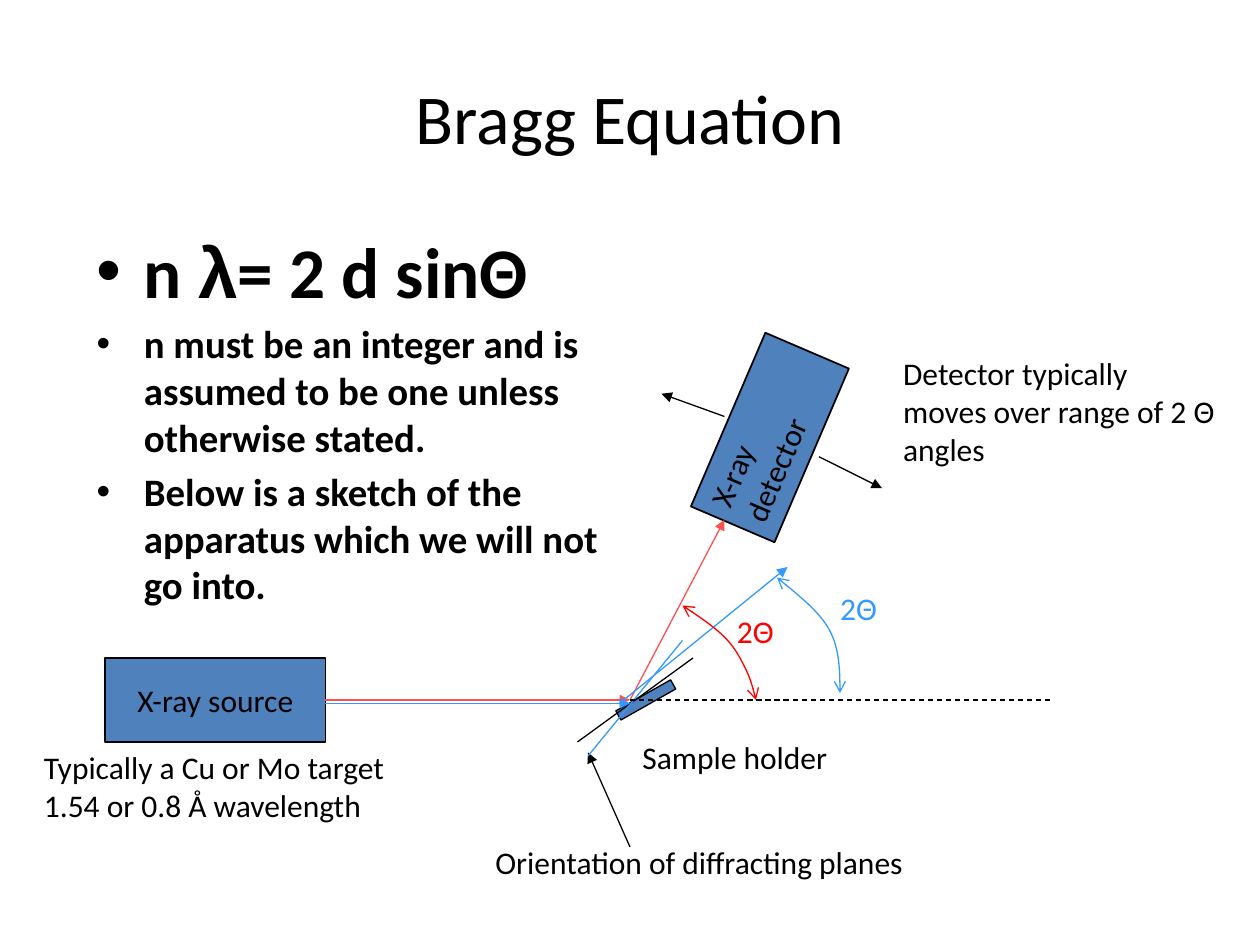
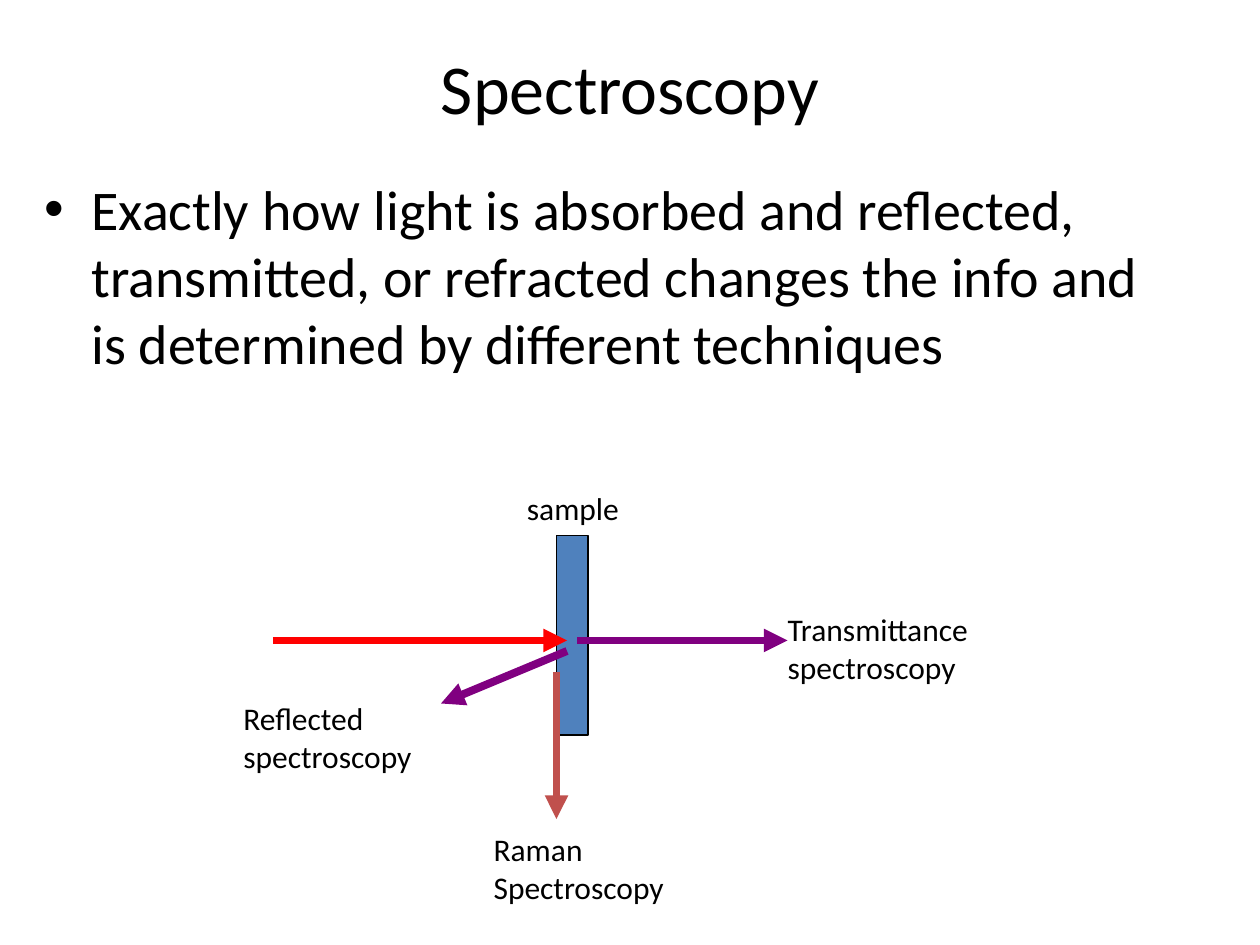
from dataclasses import dataclass

from lxml import etree
from pptx import Presentation
from pptx import util as u
from pptx.dml.color import RGBColor
from pptx.enum import dml, shapes, text
from pptx.oxml import ns


@dataclass(frozen=True)
class Theme:
    font: str = "Calibri"
    symbol_font: str = "Arial"
    black: str = "000000"
    blue: str = "4F81BD"
    red: str = "FF0000"
    coral: str = "FF5050"
    sky: str = "3399FF"
    purple: str = "800080"
    brick: str = "C0504D"
    title: float = 40
    equation: float = 40.7
    notes: float = 22.2
    body: float = 32
    label: float = 18
    thin: float = 0.75
    thick: float = 4.5


THEME = Theme()

SOURCE, DETECTOR = "X-ray source", "X-ray detector"
HIT = (360, 400)

BRAGG = {
    "title": ("Bragg Equation", (36, 21.6, 648, 90)),
    "body_at": (48, 126, 324, 222),
    "body": [
        ([("n ", THEME.font), ("λ", THEME.symbol_font), ("= 2 d sinΘ", THEME.font)], THEME.equation, True),
        ([("n must be an integer and is assumed to be one unless otherwise stated.", THEME.font)], THEME.notes, True),
        ([("Below is a sketch of the apparatus which we will not go into.", THEME.font)], THEME.notes, True),
    ],
    "boxes": [
        (SOURCE, (60, 376, 126, 48), 0, 0.75),
        ("", (366, 382, 6, 36), 60.5, 0.75),
        (DETECTOR, (386, 224, 108, 52), 293.2, 1),
    ],
    "lines": [
        ((186, 400), HIT, THEME.coral, True),
        (HIT, (414, 297), THEME.coral, True),
        ((396, 376), (330, 424), THEME.black, False),
        ((360, 484), (336, 430), THEME.black, True),
        ((468, 261), (504, 279), THEME.black, True),
        ((414, 238), (378, 225), THEME.black, True),
        ((390, 366), (336, 432), THEME.sky, False),
        ((186, 402), (360, 402), THEME.sky, True),
        ((354, 402), (450, 324), THEME.sky, True),
    ],
    "labels": [
        ("Sample holder", (360, 418, 130, 29), THEME.black, False),
        ("Orientation of diffracting planes", (276, 478, 250, 29), THEME.black, False),
        ("Detector typically moves over range of 2 Θ angles", (509, 199, 193, 72), THEME.black, True),
        ("2Θ", (414, 346, 38, 29), THEME.red, False),
        ("2Θ", (473, 333, 38, 29), THEME.sky, False),
        ("Typically a Cu or Mo target\n1.54 or 0.8 Å wavelength", (18, 424, 230, 50), THEME.black, False),
    ],
}
BASELINE = (HIT, (600, 400))
ANGLE_ARCS = [
    (THEME.red, [(390, 346), (399, 352), (408, 358), (414, 364), (420, 370), (423, 376), (426, 382),
                 (429, 388), (430.5, 394), (432, 400)]),
    (THEME.sky, [(480, 396), (480, 384), (480, 371), (474, 360), (468, 349), (456, 340), (444, 330)]),
]

SPECTROSCOPY = {
    "title": ("Spectroscopy", (36, 21.6, 648, 56)),
    "body_at": (18, 96, 648, 174),
    "body": [([("Exactly how light is absorbed and reflected, transmitted, or refracted changes the info "
                "and is determined by different techniques", THEME.font)], THEME.body, False)],
    "boxes": [("", (318, 306, 18, 114), 0, 0.75)],
    "lines": [
        ((156, 366), (324, 366), THEME.red, True),
        ((330, 366), (450, 366), THEME.purple, True),
        ((324, 372), (252, 402), THEME.purple, True),
        ((318, 384), (318, 468), THEME.brick, True),
    ],
    "labels": [
        ("sample", (294, 276, 73, 29), THEME.black, False),
        ("Reflected\nspectroscopy", (132, 396, 120, 50), THEME.black, False),
        ("Transmittance\nspectroscopy", (443, 345, 128, 50), THEME.black, False),
        ("Raman\nSpectroscopy", (275, 471, 124, 50), THEME.black, False),
    ],
}


def points(values):
    return [u.Pt(value) for value in values]


def place(shape, at):
    shape.left, shape.top, shape.width, shape.height = points(at)


def style_font(span, size, color=THEME.black, font=THEME.font, bold=False):
    span.font.name = font
    span.font.size = u.Pt(size)
    span.font.bold = bold
    span.font.color.rgb = RGBColor.from_string(color)


def style_frame(frame, size, color=THEME.black):
    for para in frame.paragraphs:
        for span in para.runs:
            style_font(span, size, color)


def style_line(shape, color, width, **ends):
    shape.line.color.rgb = RGBColor.from_string(color)
    shape.line.width = u.Pt(width)
    outline = shape._element.spPr.find(ns.qn("a:ln"))
    for end in ("headEnd", "tailEnd"):
        if end in ends:
            etree.SubElement(outline, ns.qn(f"a:{end}"), type=ends[end])


def add_page(deck, content):
    page = deck.slides.add_slide(deck.slide_layouts[1])
    title, title_at = content["title"]
    place(page.shapes.title, title_at)
    page.shapes.title.text_frame.text = title
    style_frame(page.shapes.title.text_frame, THEME.title)
    body = page.placeholders[1]
    place(body, content["body_at"])
    frame = body.text_frame
    frame.auto_size = text.MSO_AUTO_SIZE.NONE
    for index, (pieces, size, bold) in enumerate(content["body"]):
        para = frame.add_paragraph() if index else frame.paragraphs[0]
        for words, font in pieces:
            span = para.add_run()
            span.text = words
            style_font(span, size, font=font, bold=bold)
    return page


def add_box(page, words, at, rotation, width):
    box = page.shapes.add_shape(shapes.MSO_SHAPE.RECTANGLE, *points(at))
    box.rotation = rotation
    box.shadow.inherit = False
    box.fill.solid()
    box.fill.fore_color.rgb = RGBColor.from_string(THEME.blue)
    style_line(box, THEME.black, width)
    if words:
        box.text_frame.text = words
        style_frame(box.text_frame, THEME.label)
    return box


def add_line(page, start, end, color, width, arrow=False, dashed=False):
    line = page.shapes.add_connector(shapes.MSO_CONNECTOR.STRAIGHT, *points(start + end))
    if dashed:
        line.line.dash_style = dml.MSO_LINE.DASH
    style_line(line, color, width, **({"tailEnd": "triangle"} if arrow else {}))
    etree.SubElement(line._element.spPr, ns.qn("a:effectLst"))
    return line


def add_label(page, words, at, color, wrap):
    label = page.shapes.add_textbox(*points(at))
    label.text_frame.word_wrap = wrap
    label.text_frame.text = words
    style_frame(label.text_frame, THEME.label, color)


def curve_points(controls, steps=12):
    for first in range(0, len(controls) - 1, 3):
        a, b, c, d = controls[first:first + 4]
        for step in range(1, steps + 1):
            t = step / steps
            s = 1 - t
            yield tuple(u.Pt(s**3 * p + 3 * s * s * t * q + 3 * s * t * t * r + t**3 * v)
                        for p, q, r, v in zip(a, b, c, d))


def add_arc(page, color, controls):
    builder = page.shapes.build_freeform(*points(controls[0]))
    builder.add_line_segments(list(curve_points(controls)), close=False)
    arc = builder.convert_to_shape()
    arc.shadow.inherit = False
    arc.fill.background()
    style_line(arc, color, THEME.thin, headEnd="arrow", tailEnd="arrow")


def add_diagram(page, content, width):
    boxes = [add_box(page, *box) for box in content["boxes"]]
    lines = [add_line(page, start, end, color, width, arrow)
             for start, end, color, arrow in content["lines"]]
    for label in content["labels"]:
        add_label(page, *label)
    return boxes, lines


def build_bragg(deck):
    page = add_page(deck, BRAGG)
    (source, _, detector), lines = add_diagram(page, BRAGG, THEME.thin)
    lines[0].begin_connect(source, 3)
    source.text_frame.word_wrap = False
    source.text_frame.vertical_anchor = text.MSO_ANCHOR.MIDDLE
    source.text_frame.paragraphs[0].alignment = text.PP_ALIGN.CENTER
    detector.text_frame.vertical_anchor = text.MSO_ANCHOR.TOP
    para = detector.text_frame.paragraphs[0]
    para.alignment = text.PP_ALIGN.LEFT
    para.space_before = u.Pt(THEME.label / 2)
    add_line(page, *BASELINE, THEME.black, THEME.thin, dashed=True)
    for color, controls in ANGLE_ARCS:
        add_arc(page, color, controls)


def build_spectroscopy(deck):
    add_diagram(add_page(deck, SPECTROSCOPY), SPECTROSCOPY, THEME.thick)


def main():
    deck = Presentation()
    deck.slide_width, deck.slide_height = u.Pt(720), u.Pt(540)
    build_bragg(deck)
    build_spectroscopy(deck)
    deck.save("out.pptx")


if __name__ == "__main__":
    main()
